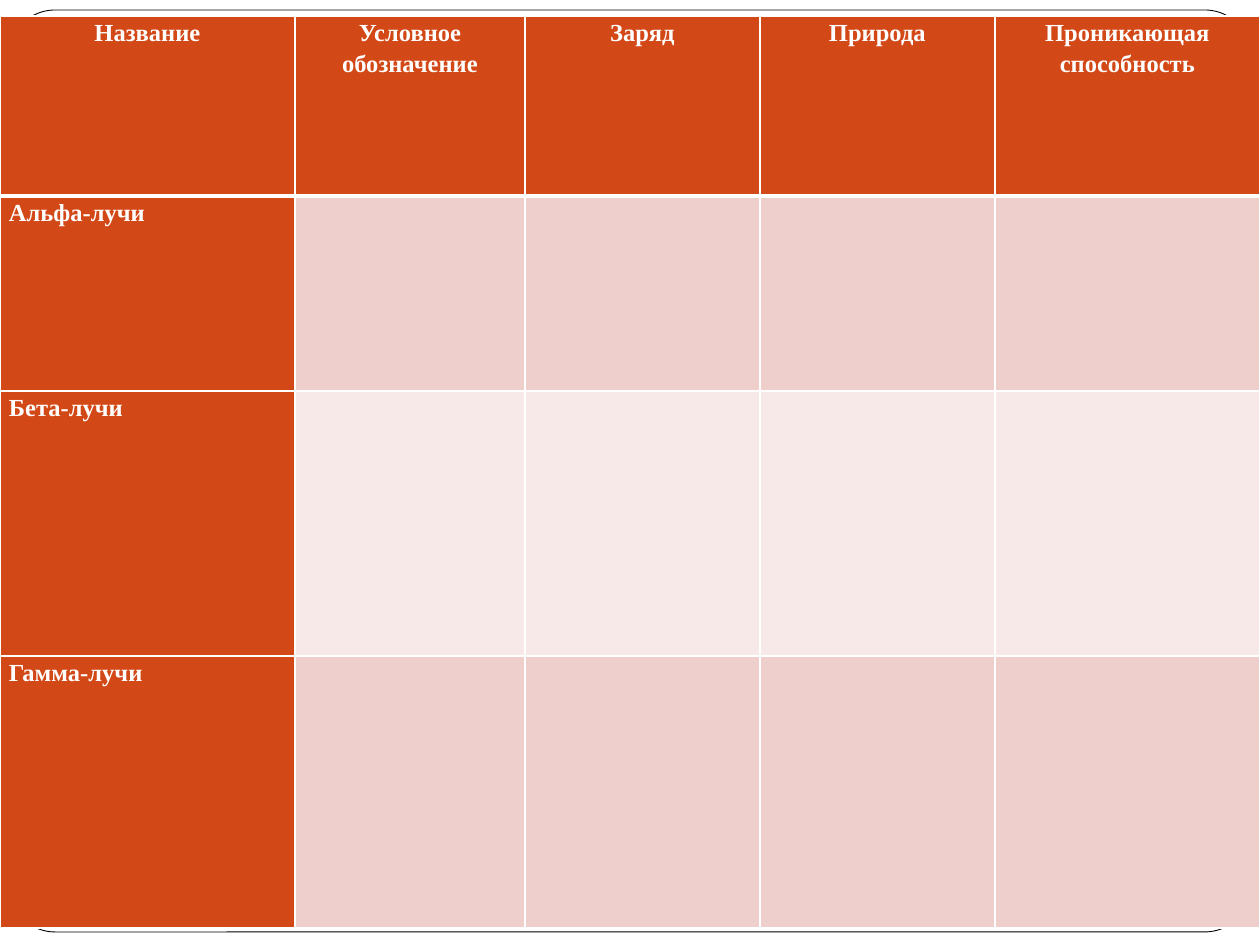
"""Build a slide with a blank comparison table of alpha, beta and gamma rays."""
from dataclasses import dataclass

from lxml import etree
from pptx import Presentation, util as u
from pptx.dml.color import RGBColor
from pptx.enum import shapes, text
from pptx.oxml import ns

PX_PER_INCH = 126
WHITE = RGBColor(0xFF, 0xFF, 0xFF)
BLACK = RGBColor(0x00, 0x00, 0x00)
ORANGE = RGBColor(0xD3, 0x48, 0x17)
PINK = RGBColor(0xEF, 0xCF, 0xCC)
PALE_PINK = RGBColor(0xF7, 0xE9, 0xE8)


def px(length: int) -> u.Emu:
    return u.Emu(round(length * u.Inches(1) / PX_PER_INCH))


LABEL_FONT = {"name": "Times New Roman", "size": u.Pt(14), "bold": True}
LABEL_SPACING = {"line_spacing": 1.15, "space_after": u.Pt(7.5)}
LABEL_MARGINS = {
    "margin_left": px(9),
    "margin_right": px(9),
    "margin_top": 0,
    "margin_bottom": 0,
}


@dataclass(frozen=True)
class Property:
    title: str
    width: int


@dataclass(frozen=True)
class Ray:
    name: str
    height: int
    color: RGBColor


PROPERTIES = [
    Property("Название", 295),
    Property("Условное обозначение", 230),
    Property("Заряд", 235),
    Property("Природа", 235),
    Property("Проникающая способность", 265),
]
RAYS = [
    Ray("Альфа-лучи", 195, PINK),
    Ray("Бета-лучи", 265, PALE_PINK),
    Ray("Гамма-лучи", 272, PINK),
]
HEADER_HEIGHT = 180


def apply(target, values: dict) -> None:
    for key, value in values.items():
        setattr(target, key, value)


def draw_frame(slide) -> None:
    frame = slide.shapes.add_shape(
        shapes.MSO_SHAPE.ROUNDED_RECTANGLE, px(9), px(10), px(1242), px(922)
    )
    frame.adjustments[0] = 0.05
    frame.shadow.inherit = False
    frame.fill.solid()
    frame.fill.fore_color.rgb = WHITE
    frame.line.color.rgb = BLACK
    frame.line.width = u.Pt(0.5)


def set_borders(cell, top: int, bottom: int) -> None:
    properties = cell._tc.get_or_add_tcPr()
    widths = {"lnL": 1, "lnR": 1, "lnT": top, "lnB": bottom}
    for position, (side, width) in enumerate(widths.items()):
        border = etree.Element(ns.qn(f"a:{side}"), w=str(u.Pt(width)))
        fill = etree.SubElement(border, ns.qn("a:solidFill"))
        etree.SubElement(fill, ns.qn("a:srgbClr"), val=str(WHITE))
        properties.insert(position, border)


def fill_cell(cell, color: RGBColor, top: int = 1, bottom: int = 1) -> None:
    cell.fill.solid()
    cell.fill.fore_color.rgb = color
    set_borders(cell, top, bottom)


def write_label(cell, label: str, alignment: text.PP_ALIGN) -> None:
    apply(cell, LABEL_MARGINS)
    paragraph = cell.text_frame.paragraphs[0]
    apply(paragraph, {**LABEL_SPACING, "alignment": alignment})
    run = paragraph.add_run()
    run.text = label
    apply(run.font, LABEL_FONT)
    run.font.color.rgb = WHITE


def draw_table(slide) -> None:
    heights = [HEADER_HEIGHT, *(ray.height for ray in RAYS)]
    width = sum(prop.width for prop in PROPERTIES)
    table = slide.shapes.add_table(
        len(heights), len(PROPERTIES), 0, px(16), px(width), px(sum(heights))
    ).table
    for row, height in zip(table.rows, heights):
        row.height = px(height)
    for index, prop in enumerate(PROPERTIES):
        table.columns[index].width = px(prop.width)
        header = table.cell(0, index)
        fill_cell(header, ORANGE, bottom=3)
        write_label(header, prop.title, text.PP_ALIGN.CENTER)
    for index, ray in enumerate(RAYS, start=1):
        for column in range(len(PROPERTIES)):
            color = ray.color if column else ORANGE
            fill_cell(table.cell(index, column), color, top=3 if index == 1 else 1)
        write_label(table.cell(index, 0), ray.name, text.PP_ALIGN.LEFT)


def main() -> None:
    deck = Presentation()
    apply(deck, {"slide_width": px(1260), "slide_height": px(945)})
    slide = deck.slides.add_slide(deck.slide_layouts[6])
    draw_frame(slide)
    draw_table(slide)
    deck.save("out.pptx")


if __name__ == "__main__":
    main()
